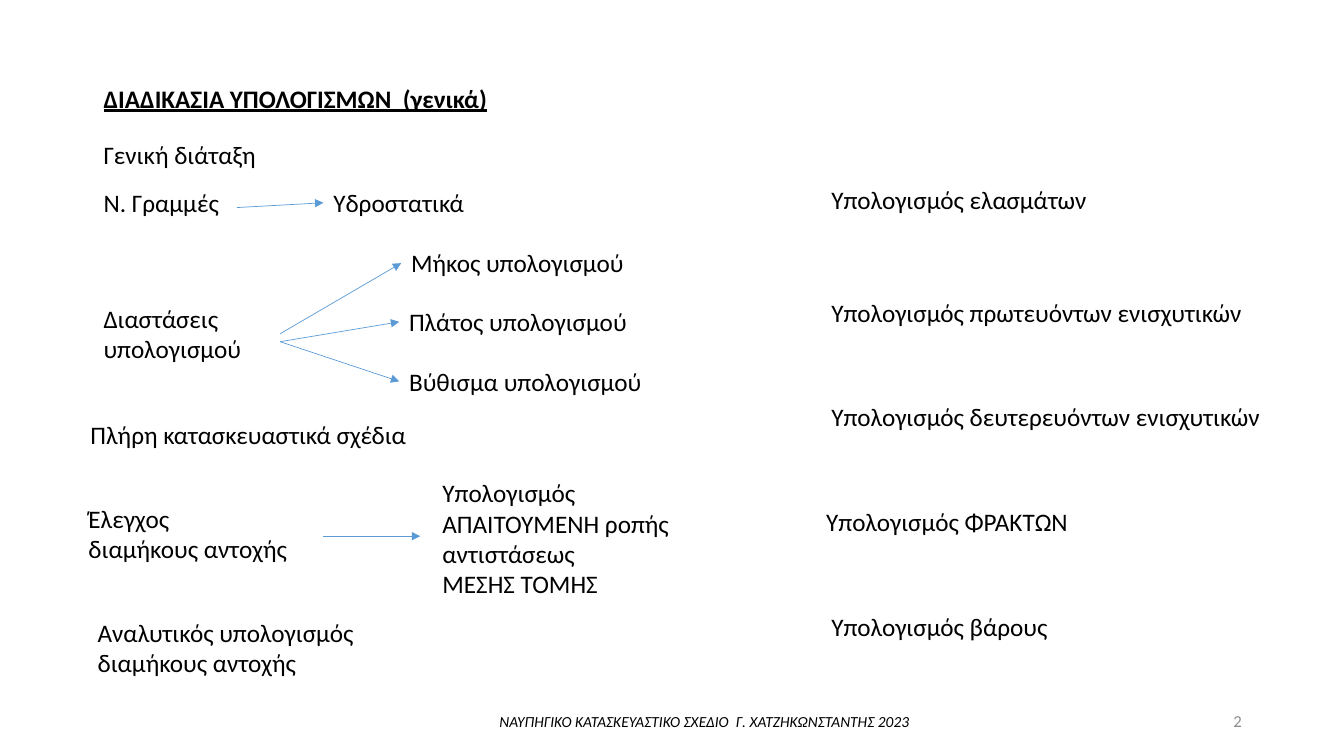
from lxml import etree
from pptx import Presentation
from pptx.dml.color import RGBColor
from pptx.enum.shapes import MSO_CONNECTOR
from pptx.enum.text import MSO_ANCHOR, MSO_AUTO_SIZE, PP_ALIGN
from pptx.oxml.ns import qn
from pptx.util import Cm, Pt

STRAIGHT = MSO_CONNECTOR.STRAIGHT
TOP, MIDDLE = MSO_ANCHOR.TOP, MSO_ANCHOR.MIDDLE
LEFT, CENTER, RIGHT = PP_ALIGN.LEFT, PP_ALIGN.CENTER, PP_ALIGN.RIGHT
NO_FIT = MSO_AUTO_SIZE.NONE

COLORS = {"text": "000000", "number": "8C8C8C", "arrow": "5B9BD5"}
LEFT_SIDE = 1  # connection site
LINE_H, TWO_LINES_H = 1.02, 1.8


def write(sp, text, size=18, color="text", bold=False, italic=False,
          underline=False, align=LEFT, anchor=TOP, wrap=True):
    tf = sp.text_frame
    tf.word_wrap = wrap
    tf.auto_size = NO_FIT
    tf.vertical_anchor = anchor
    for i, line in enumerate(text.split("\n")):
        p = tf.paragraphs[0] if i == 0 else tf.add_paragraph()
        p.alignment = align
        r = p.add_run()
        r.text = line
        f = r.font
        f.name, f.size = "Calibri", Pt(size)
        f.bold, f.italic, f.underline = bold, italic, underline
        f.color.rgb = RGBColor.from_string(COLORS[color])


def add_label(s, x, y, w, h, text, **fmt):
    sp = s.shapes.add_textbox(Cm(x), Cm(y), Cm(w), Cm(h))
    write(sp, text, **fmt)
    return sp


def add_arrow(s, x1, y1, x2, y2):
    cxn = s.shapes.add_connector(STRAIGHT, Cm(x1), Cm(y1), Cm(x2), Cm(y2))
    cxn.line.color.rgb = RGBColor.from_string(COLORS["arrow"])
    cxn.line.width = Pt(0.5)
    etree.SubElement(cxn.line._get_or_add_ln(), qn("a:tailEnd"), type="triangle")
    etree.SubElement(cxn._element.spPr, qn("a:effectLst"))
    return cxn


def add_title(s, x, y, w, h):
    sp = s.shapes.title
    sp.left, sp.top, sp.width, sp.height = Cm(x), Cm(y), Cm(w), Cm(h)
    write(sp, "ΔΙΑΔΙΚΑΣΙΑ ΥΠΟΛΟΓΙΣΜΩΝ  (γενικά)", bold=True, underline=True)


def add_process(s, x, y):
    # Steps in the left column
    steps = [
        (0.38, 0, 8.2, LINE_H, "Γενική διάταξη"),
        (0.38, 1.22, 4.09, LINE_H, "Ν. Γραμμές"),
        (0.38, 4.14, 4.09, TWO_LINES_H, "Διαστάσεις\nυπολογισμού"),
        (0.05, 7.06, 10.95, LINE_H, "Πλήρη κατασκευαστικά σχέδια"),
        (0, 9.17, 5.87, TWO_LINES_H, "Έλεγχος\nδιαμήκους αντοχής"),
        (0.23, 12.04, 7.95, TWO_LINES_H, "Αναλυτικός υπολογισμός διαμήκους αντοχής"),
    ]
    for dx, dy, w, h, text in steps:
        add_label(s, x + dx, y + dy, w, h, text)

    # Results, each with the start of the arrow that leads to it
    results = [
        (6.17, 1.22, 5.89, "Υδροστατικά", 3.99, 1.85),
        (8.13, 2.74, 6.25, "Μήκος υπολογισμού", 5.08, 5.03),
        (8.08, 4.22, 6.3, "Πλάτος υπολογισμού", 5.08, 5.23),
        (8.08, 5.72, 6.93, "Βύθισμα υπολογισμού", 5.08, 5.23),
    ]
    for dx, dy, w, text, ax, ay in results:
        sp = add_label(s, x + dx, y + dy, w, LINE_H, text)
        cxn = add_arrow(s, x + ax, y + ay, x + dx, y + dy + LINE_H / 2)
        cxn.end_connect(sp, LEFT_SIDE)

    # Required section modulus
    add_label(s, x + 8.92, y + 8.53, 6.32, 3.33,
              "Υπολογισμός ΑΠΑΙΤΟΥΜΕΝΗ ροπής αντιστάσεως\nΜΕΣΗΣ ΤΟΜΉΣ")
    add_arrow(s, x + 6.17, y + 10.13, x + 8.61, y + 10.13)


def add_calculations(s, x, y, pitch=2.64):
    items = [
        (0.13, 0, 8.41, "ελασμάτων", True),
        (0.13, 0.2, 11.79, "πρωτευόντων ενισχυτικών", True),
        (0.13, 0.2, 11.46, "δευτερευόντων ενισχυτικών", False),
        (0, 0.2, 6.68, "ΦΡΑΚΤΩΝ", False),
        (0.13, 0.2, 7.52, "βάρους", True),
    ]
    for i, (dx, dy, w, subject, wrap) in enumerate(items):
        add_label(s, x + dx, y + i * pitch + dy, w, LINE_H,
                  f"Υπολογισμός {subject}", wrap=wrap)


def add_footer(s, x, y):
    add_label(s, x, y + 0.18, 21.54, 0.74,
              "ΝΑΥΠΗΓΙΚΟ ΚΑΤΑΣΚΕΥΑΣΤΙΚΟ ΣΧΕΔΙΟ  Γ. ΧΑΤΖΗΚΩΝΣΤΑΝΤΗΣ 2023",
              size=11, italic=True, align=CENTER)
    add_label(s, x + 16.94, y, 7.62, 1.01, "2", size=12, color="number",
              align=RIGHT, anchor=MIDDLE)


def main():
    prs = Presentation()
    prs.slide_width, prs.slide_height = Cm(33.87), Cm(19.05)
    s = prs.slides.add_slide(prs.slide_layouts[5])
    add_title(s, 2.36, 1.96, 14, LINE_H)
    add_process(s, 1.98, 3.38)
    add_calculations(s, 20.57, 4.52)
    add_footer(s, 6.99, 17.65)
    prs.save("out.pptx")


if __name__ == "__main__":
    main()
